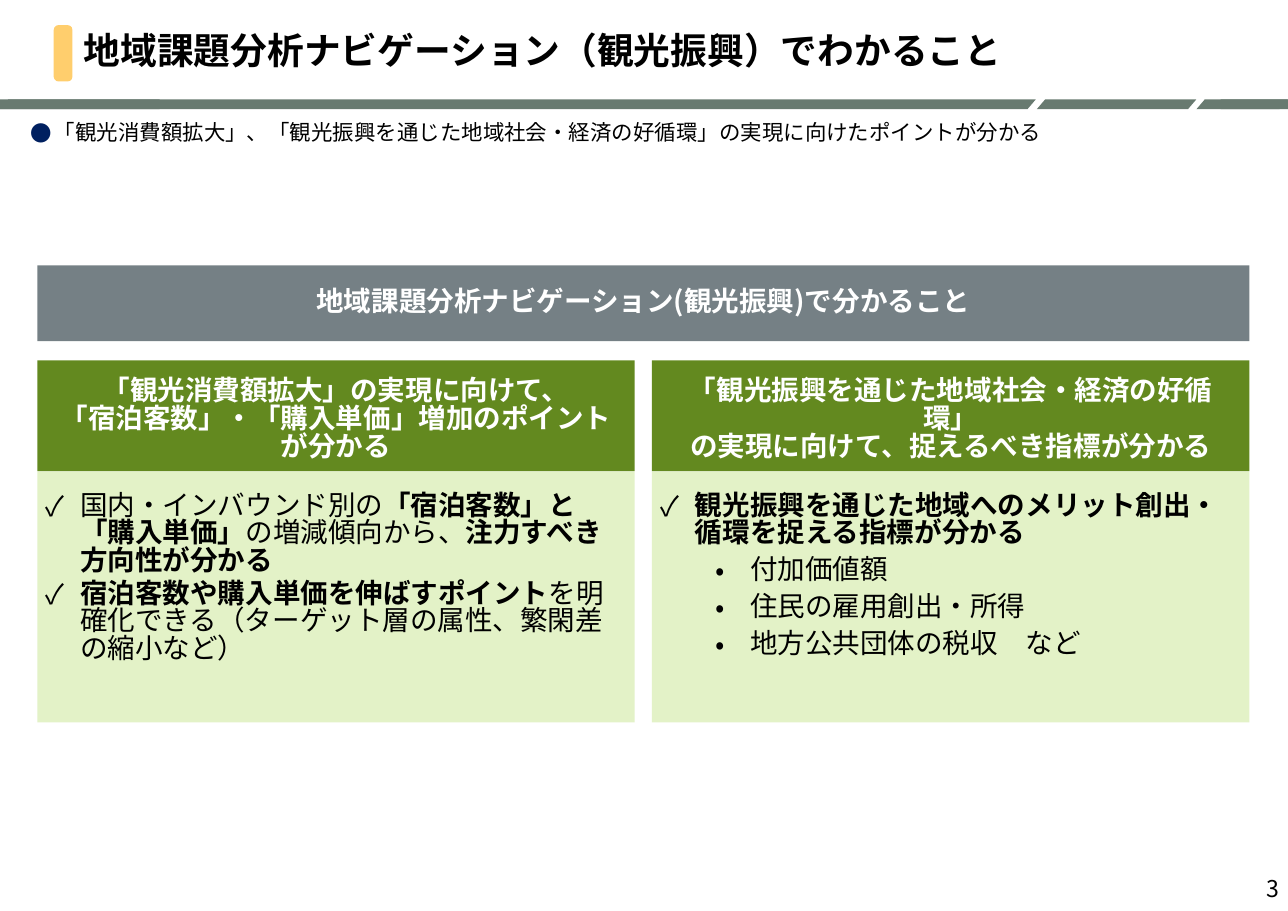
"""Build the slide on what the tourism promotion navigation reveals."""
from lxml import etree
from pptx import Presentation
from pptx.dml.color import RGBColor
from pptx.enum.lang import MSO_LANGUAGE_ID
from pptx.enum.shapes import MSO_SHAPE
from pptx.enum.text import MSO_ANCHOR, MSO_AUTO_SIZE, PP_ALIGN
from pptx.oxml.ns import qn
from pptx.util import Cm, Pt

FONT = "Noto Sans CJK JP"
BLACK = RGBColor(0x00, 0x00, 0x00)
WHITE = RGBColor(0xFF, 0xFF, 0xFF)
NAVY = RGBColor(0x00, 0x20, 0x60)
BAND = RGBColor(0x68, 0x7A, 0x70)
YELLOW = RGBColor(0xFF, 0xCE, 0x6D)
GRAY = RGBColor(0x75, 0x80, 0x85)
GREEN = RGBColor(0x63, 0x89, 0x1F)
PALE_GREEN = RGBColor(0xE3, 0xF2, 0xC7)
LEFT, CENTER, RIGHT = PP_ALIGN.LEFT, PP_ALIGN.CENTER, PP_ALIGN.RIGHT
TOP, MIDDLE = MSO_ANCHOR.TOP, MSO_ANCHOR.MIDDLE
JAPANESE = MSO_LANGUAGE_ID.JAPANESE
NO_FIT = MSO_AUTO_SIZE.NONE
RECTANGLE = MSO_SHAPE.RECTANGLE
PARALLELOGRAM = MSO_SHAPE.PARALLELOGRAM
ROUNDED = MSO_SHAPE.ROUNDED_RECTANGLE


def add_box(kind, left, top, width, height, color):
    box = slide.shapes.add_shape(kind, Cm(left), Cm(top), Cm(width), Cm(height))
    box.shadow.inherit = False
    box.fill.solid()
    box.fill.fore_color.rgb = color
    box.line.fill.background()
    return box


def write(box, text, size=18, color=BLACK, align=LEFT, anchor=TOP, insets=(0.25, 0.13, 0.25, 0.13),
          bullet=None, bullet_color=None, margin=0.0, hanging=0.0, level=0, after=0):
    """Append a paragraph in which ** switches bold on and off."""
    frame = box.text_frame
    frame.word_wrap = True
    frame.auto_size = NO_FIT
    frame.vertical_anchor = anchor
    frame.margin_left, frame.margin_top, frame.margin_right, frame.margin_bottom = map(Cm, insets)
    para = frame.paragraphs[0]
    if para.runs:
        para = frame.add_paragraph()
    para.alignment = align
    para.level = level
    para.line_spacing = 0.84
    para.space_before = Pt(0)
    para.space_after = Pt(after)
    if bullet:
        properties = para._p.get_or_add_pPr()
        properties.set("marL", str(Cm(margin)))
        properties.set("indent", str(-Cm(hanging)))
        if bullet_color:
            holder = etree.SubElement(properties, qn("a:buClr"))
            etree.SubElement(holder, qn("a:srgbClr"), val=str(bullet_color))
        etree.SubElement(properties, qn("a:buFont"), typeface=FONT)
        etree.SubElement(properties, qn("a:buChar"), char=bullet)
    for number, part in enumerate(text.split("**")):
        for row, line in enumerate(part.split("\n")):
            if row:
                para.add_line_break()
            if line:
                span = para.add_run()
                span.text = line
                span.font.name = FONT
                span.font.size = Pt(size)
                span.font.bold = number % 2 == 1
                span.font.color.rgb = color
                span.font.language_id = JAPANESE
                latin = span.font._element.find(qn("a:latin"))
                latin.addnext(etree.Element(qn("a:ea"), typeface=FONT))


deck = Presentation()
deck.slide_width, deck.slide_height = Cm(29.69), Cm(21.01)
slide = deck.slides.add_slide(deck.slide_layouts[1])

for left, width in [(0, 23.88), (23.9, 3.68), (27.58, 2.11)]:
    band = add_box(PARALLELOGRAM, left, 2.29, width, 0.23, BAND)
    band.adjustments[0] = 0.849
for left, width in [(0, 3.68), (28.14, 1.55)]:
    add_box(RECTANGLE, left, 2.29, width, 0.23, BAND)
marker = add_box(ROUNDED, 1.24, 0.58, 0.43, 1.3, YELLOW)
marker.adjustments[0] = 0.255

title, lead = slide.shapes.title, slide.placeholders[1]
title.left, title.top, title.width, title.height = Cm(1.68), Cm(0.58), Cm(27.3), Cm(1.3)
write(title, "**地域課題分析ナビゲーション（観光振興）でわかること**", size=24, anchor=MIDDLE)
lead.left, lead.top, lead.width, lead.height = Cm(0.61), Cm(2.74), Cm(28.5), Cm(0.81)
write(lead, "「観光消費額拡大」、「観光振興を通じた地域社会・経済の好循環」の実現に向けたポイントが分かる",
      size=14, insets=(0.1, 0.1, 0.1, 0.1), bullet="●", bullet_color=NAVY, margin=0.53, hanging=0.53)

banner = add_box(RECTANGLE, 0.86, 6.12, 27.94, 1.75, GRAY)
write(banner, "**地域課題分析ナビゲーション(観光振興)で分かること**", color=WHITE, align=CENTER, anchor=MIDDLE)

columns = [
    (["「観光消費額拡大」の実現に向けて、\n「宿泊客数」・「購入単価」増加のポイントが分かる"],
     [("国内・インバウンド別の**「宿泊客数」と「購入単価」**の増減傾向から、**注力すべき方向性が分かる**", 0, 3),
      ("**宿泊客数や購入単価を伸ばすポイント**を明確化できる（ターゲット層の属性、繁閑差の縮小など）", 0, 6)]),
    (["「観光振興を通じた地域社会・経済の好循環」", "の実現に向けて、捉えるべき指標が分かる"],
     [("**観光振興を通じた地域へのメリット創出・循環を捉える指標が分かる**", 0, 6),
      ("付加価値額", 1, 6),
      ("住民の雇用創出・所得", 1, 6),
      ("地方公共団体の税収　など", 1, 6)]),
]
for index, (headings, points) in enumerate(columns):
    left = 0.86 + 14.17 * index
    body = add_box(RECTANGLE, left, 10.87, 13.77, 5.79, PALE_GREEN)
    for text, level, after in points:
        write(body, text, insets=(0.2, 0.5, 0.2, 0.5), bullet="✓•"[level],
              margin=0.79 + 1.27 * level, hanging=0.79, level=level, after=after)
    header = add_box(RECTANGLE, left, 8.31, 13.77, 2.56, GREEN)
    for heading in headings:
        write(header, f"**{heading}**", color=WHITE, align=CENTER, anchor=MIDDLE,
              insets=(0.3, 0.4, 0.3, 0.2))

page_number = slide.shapes.add_textbox(Cm(22.81), Cm(19.99), Cm(6.93), Cm(1.12))
write(page_number, "3", size=15.1, align=RIGHT, anchor=MIDDLE)

deck.save("out.pptx")
